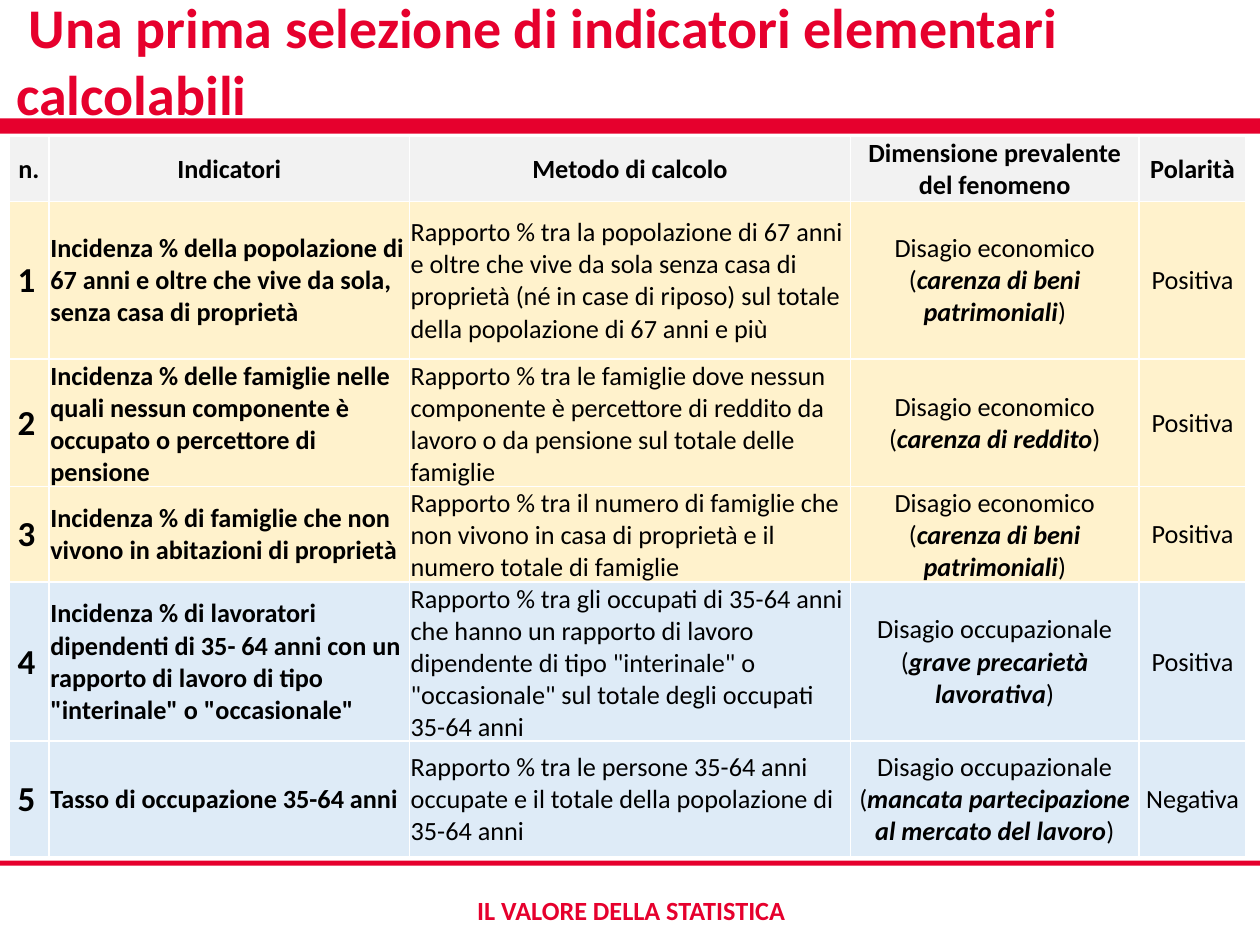
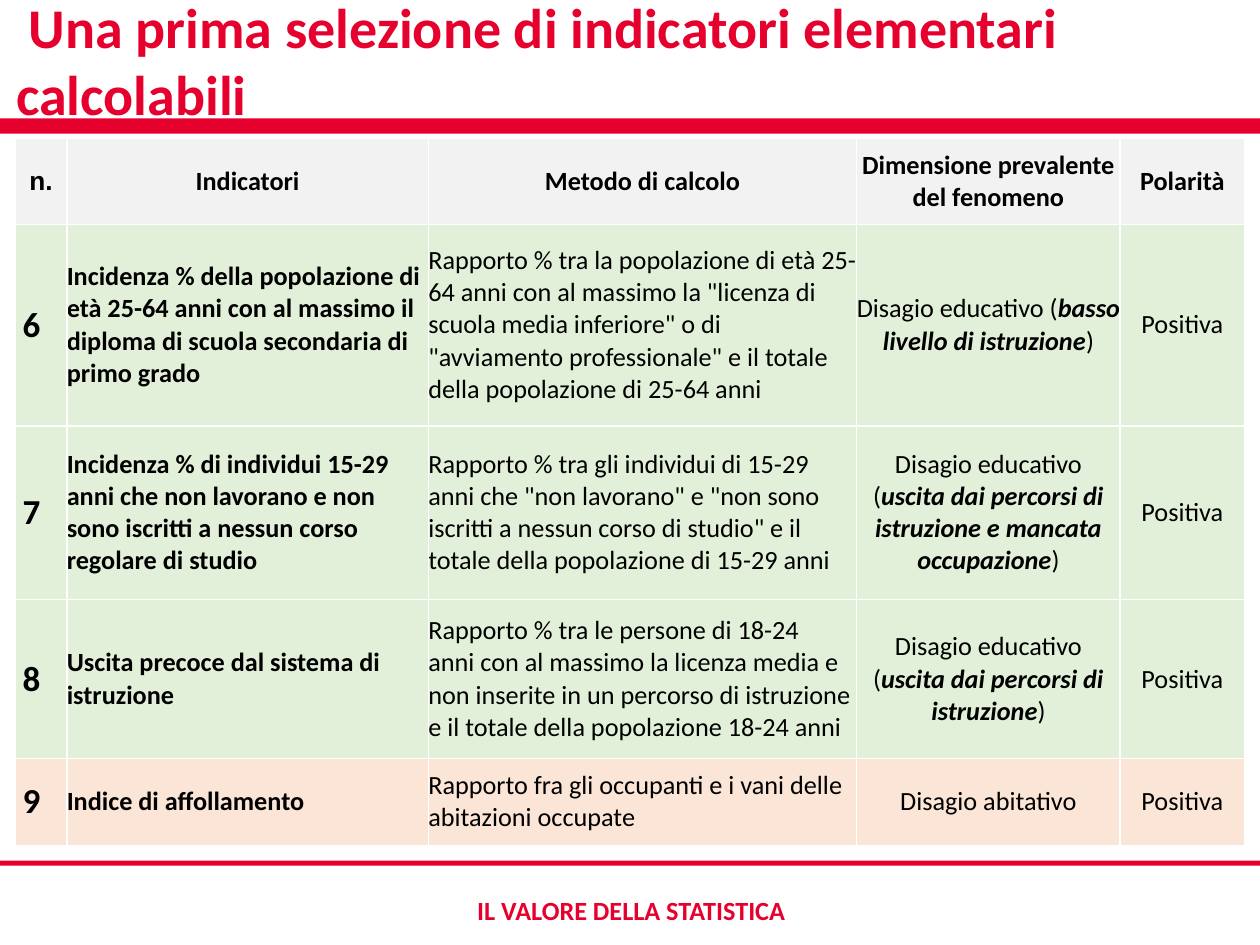
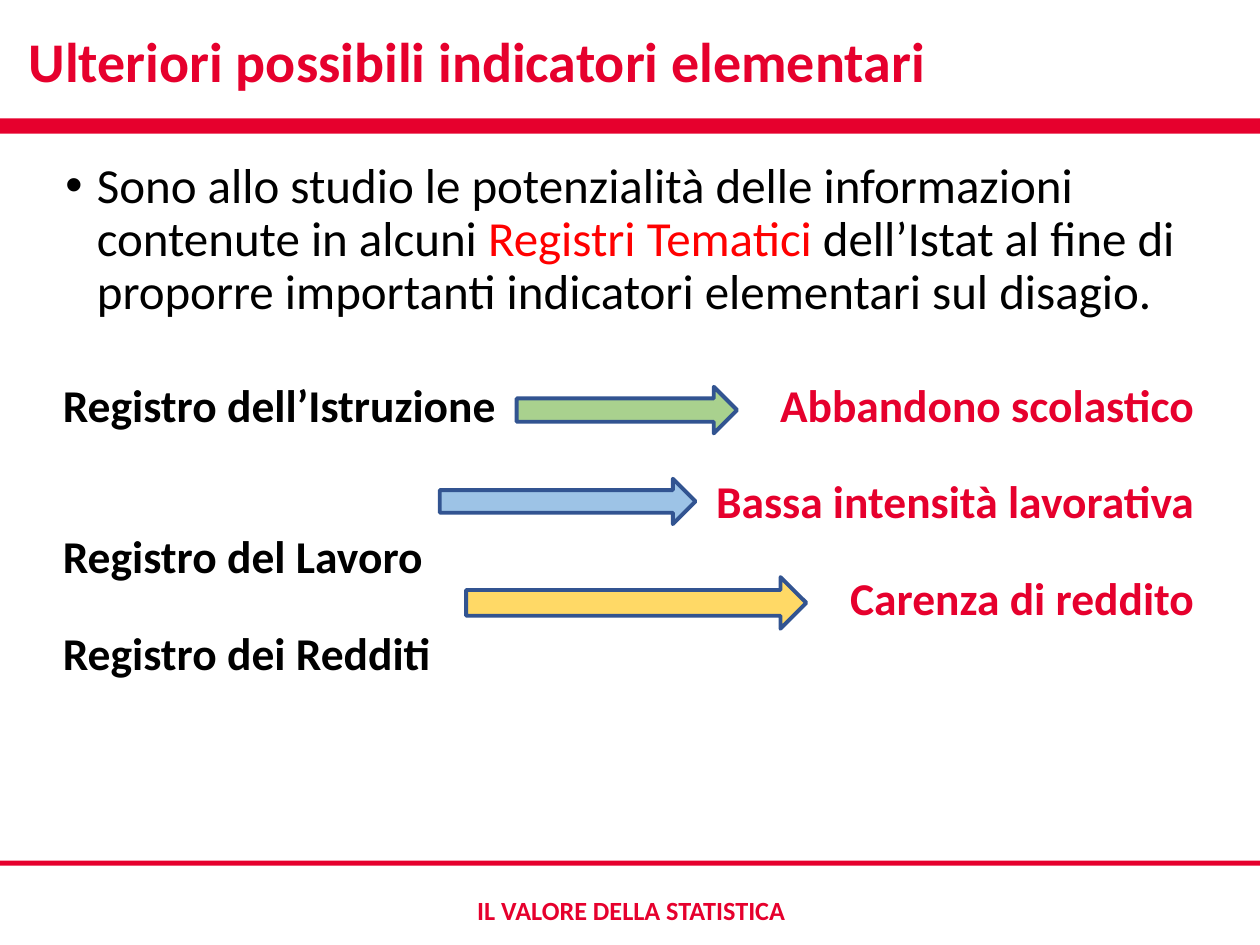
from dataclasses import dataclass

from lxml import etree
from pptx import Presentation
from pptx.dml.color import RGBColor
from pptx.enum import shapes, text
from pptx.oxml import ns
from pptx.util import Inches, Pt


@dataclass(frozen=True)
class Theme:
    font: str = "Calibri"
    red: str = "E6002D"
    accent: str = "FF0000"
    black: str = "000000"
    white: str = "FFFFFF"
    header: str = "F2F2F2"
    economic: str = "FFF2CC"
    work: str = "DEEBF7"
    school: str = "E2F0D9"
    housing: str = "FBE5D6"
    arrow_line: str = "325491"
    arrow_green: str = "A9D18E"
    arrow_blue: str = "9DC3E6"
    arrow_yellow: str = "FFD966"
    title_size: int = 32
    body_size: int = 28
    register_size: int = 26
    number_size: int = 20
    small_size: int = 15


@dataclass(frozen=True)
class Box:
    left: float
    top: float
    width: float
    height: float

    def inside(self, left, top, width, height):
        return Box(self.left + left, self.top + top, width, height)

    def lengths(self):
        return [Inches(side) for side in (self.left, self.top, self.width, self.height)]


THEME = Theme()
PAGE = Box(0, 0, 10, 7.5)
LEFT, CENTER, RIGHT = text.PP_ALIGN.LEFT, text.PP_ALIGN.CENTER, text.PP_ALIGN.RIGHT
MIDDLE = text.MSO_ANCHOR.MIDDLE
SELECTION_TITLE = "Una prima selezione di indicatori elementari calcolabili"
HEADINGS = ["n.", "Indicatori", "Metodo di calcolo",
            "Dimensione prevalente del fenomeno", "Polarità"]

FIRST_INDICATORS = [
    (THEME.economic, "Incidenza % della popolazione di 67 anni e oltre che vive da sola, "
     "senza casa di proprietà",
     "Rapporto % tra la popolazione di 67 anni e oltre che vive da sola senza casa di "
     "proprietà (né in case di riposo) sul totale della popolazione di 67 anni e più",
     "Disagio economico", "carenza di beni patrimoniali", "Positiva"),
    (THEME.economic, "Incidenza % delle famiglie nelle quali nessun componente è occupato "
     "o percettore di pensione",
     "Rapporto % tra le famiglie dove nessun componente è percettore di reddito da lavoro "
     "o da pensione sul totale delle famiglie",
     "Disagio economico", "carenza di reddito", "Positiva"),
    (THEME.economic, "Incidenza % di famiglie che non vivono in abitazioni di proprietà",
     "Rapporto % tra il numero di famiglie che non vivono in casa di proprietà e il numero "
     "totale di famiglie",
     "Disagio economico", "carenza di beni patrimoniali", "Positiva"),
    (THEME.work, "Incidenza % di lavoratori dipendenti di 35- 64 anni con un rapporto di "
     'lavoro di tipo "interinale" o "occasionale"',
     "Rapporto % tra gli occupati di 35-64 anni che hanno un rapporto di lavoro dipendente "
     'di tipo "interinale" o "occasionale" sul totale degli occupati 35-64 anni',
     "Disagio occupazionale", "grave precarietà lavorativa", "Positiva"),
    (THEME.work, "Tasso di occupazione 35-64 anni",
     "Rapporto % tra le persone 35-64 anni occupate e il totale della popolazione di "
     "35-64 anni",
     "Disagio occupazionale", "mancata partecipazione al mercato del lavoro", "Negativa"),
]

SECOND_INDICATORS = [
    (THEME.school, "Incidenza % della popolazione di età 25-64 anni con al massimo il "
     "diploma di scuola secondaria di primo grado",
     'Rapporto % tra la popolazione di età 25-64 anni con al massimo la "licenza di scuola '
     'media inferiore" o di "avviamento professionale" e il totale della popolazione di '
     "25-64 anni",
     "Disagio educativo", "basso livello di istruzione", "Positiva"),
    (THEME.school, "Incidenza % di individui 15-29 anni che non lavorano e non sono "
     "iscritti a nessun corso regolare di studio",
     'Rapporto % tra gli individui di 15-29 anni che "non lavorano" e "non sono iscritti a '
     'nessun corso di studio" e il totale della popolazione di 15-29 anni',
     "Disagio educativo", "uscita dai percorsi di istruzione e mancata occupazione",
     "Positiva"),
    (THEME.school, "Uscita precoce dal sistema di istruzione",
     "Rapporto % tra le persone di 18-24\nanni con al massimo la licenza media e non "
     "inserite in un percorso di istruzione e il totale della popolazione 18-24 anni",
     "Disagio educativo", "uscita dai percorsi di istruzione", "Positiva"),
    (THEME.housing, "Indice di affollamento",
     "Rapporto fra gli occupanti e i vani delle abitazioni occupate",
     "Disagio abitativo", "", "Positiva"),
]


def write(para, words, size=THEME.small_size, color=THEME.black, bold=False,
          italic=False, font=THEME.font, align=None, indent=0):
    if align is not None:
        para.alignment = align
    if indent:
        para._p.get_or_add_pPr().set("indent", str(Inches(indent)))
    for position, line in enumerate(words.split("\n")):
        if position:
            para.add_line_break()
        span = para.add_run()
        span.text = line
        span.font.size = Pt(size)
        span.font.name = font
        span.font.bold = bold
        span.font.italic = italic
        span.font.color.rgb = RGBColor.from_string(color)


def add_frame(page, box, anchor=None):
    frame = page.shapes.add_textbox(*box.lengths()).text_frame
    frame.word_wrap = True
    if anchor is not None:
        frame.vertical_anchor = anchor
    return frame


def add_filled(page, box, kind, fill, line=None):
    shape = page.shapes.add_shape(kind, *box.lengths())
    shape.shadow.inherit = False
    shape.fill.solid()
    shape.fill.fore_color.rgb = RGBColor.from_string(fill)
    if line:
        shape.line.color.rgb = RGBColor.from_string(line)
        shape.line.width = Pt(2.25)
    else:
        shape.line.fill.background()


def add_bands_and_footer(page, box):
    for top, height in ((6.83, 0.04), (0.94, 0.12)):
        add_filled(page, box.inside(0, top, box.width, height),
                   shapes.MSO_SHAPE.RECTANGLE, THEME.red)
    frame = add_frame(page, box.inside(2.12, 7.05, 5.78, 0.35))
    write(frame.paragraphs[0], "IL VALORE DELLA STATISTICA", color=THEME.red,
          bold=True, align=CENTER)


def add_title(page, box, title):
    frame = add_frame(page, box, MIDDLE)
    write(frame.paragraphs[0], title, size=THEME.title_size, color=THEME.red,
          bold=True, indent=0.1)


def add_page(deck, title):
    page = deck.slides.add_slide(deck.slide_layouts[6])
    add_bands_and_footer(page, PAGE)
    add_title(page, PAGE.inside(0.03, 0.04, 9.97, 0.87), title)
    return page


def style_cell(cell, fill, inset):
    properties = cell._tc.get_or_add_tcPr()
    for side in ("a:lnL", "a:lnR", "a:lnT", "a:lnB"):
        border = etree.SubElement(properties, ns.qn(side), w=str(Pt(1)))
        solid = etree.SubElement(border, ns.qn("a:solidFill"))
        etree.SubElement(solid, ns.qn("a:srgbClr"), val=THEME.white)
    cell.fill.solid()
    cell.fill.fore_color.rgb = RGBColor.from_string(fill)
    cell.vertical_anchor = MIDDLE
    cell.margin_left = cell.margin_right = cell.margin_top = Inches(inset)
    cell.margin_bottom = 0


def add_indicator_table(page, box, widths, heights, indicators, first_number, inset,
                        number_font):
    table = page.shapes.add_table(len(heights), len(widths), *box.lengths()).table
    table.first_row = table.horz_banding = False
    for column, width in zip(table.columns, widths):
        column.width = Inches(width)
    for row, height in zip(table.rows, heights):
        row.height = Inches(height)
    fills = [THEME.header] + [indicator[0] for indicator in indicators]
    for row, fill in zip(table.rows, fills):
        for cell in row.cells:
            style_cell(cell, fill, inset)

    def para_at(row, column):
        return table.cell(row, column).text_frame.paragraphs[0]

    for column, heading in enumerate(HEADINGS):
        write(para_at(0, column), heading, bold=True, align=CENTER,
              font=THEME.font if column else number_font)
    for row, (_, name, method, hardship, detail, polarity) in enumerate(indicators, 1):
        write(para_at(row, 0), str(first_number + row - 1), size=THEME.number_size,
              bold=True, indent=0.06, font=number_font if row == 0 else THEME.font)
        write(para_at(row, 1), name, bold=True)
        write(para_at(row, 2), method)
        dimension = para_at(row, 3)
        write(dimension, f"{hardship} (" if detail else hardship, align=CENTER)
        if detail:
            write(dimension, detail, bold=True, italic=True)
            write(dimension, ")")
        write(para_at(row, 4), polarity, align=CENTER)


def add_study_note(page, box):
    para = add_frame(page, box).paragraphs[0]
    properties = para._p.get_or_add_pPr()
    properties.set("marL", str(Inches(0.25)))
    properties.set("indent", str(Inches(-0.25)))
    etree.SubElement(properties, ns.qn("a:buFont"), typeface="Arial")
    etree.SubElement(properties, ns.qn("a:buChar"), char="•")
    para.line_spacing = 0.9
    for words, color in (
        ("Sono allo studio le potenzialità delle informazioni contenute in alcuni ",
         THEME.black),
        ("Registri Tematici ", THEME.accent),
        ("dell’Istat al fine di proporre importanti indicatori elementari sul disagio.",
         THEME.black),
    ):
        write(para, words, size=THEME.body_size, color=color)


def add_register_list(page, box, entries, color, align, second_gap=12):
    frame = add_frame(page, box)
    for position, entry in enumerate(entries):
        para = frame.add_paragraph() if position else frame.paragraphs[0]
        if position:
            para.space_before = Pt(second_gap if position == 1 else 12)
        para.space_after = Pt(12)
        write(para, entry, size=THEME.register_size, color=color, bold=True, align=align)


def add_registers(page, box):
    add_register_list(page, box.inside(5.02, 0, 4.16, 2.09),
                      ["Abbandono scolastico", "Bassa intensità lavorativa",
                       "Carenza di reddito"], THEME.red, RIGHT)
    add_register_list(page, box.inside(0, 0, 3.7, 2.09),
                      ["Registro dell’Istruzione", "Registro del Lavoro",
                       "Registro dei Redditi"], THEME.black, LEFT, second_gap=43.5)
    for place, fill in (
        ((3.7, 0.13, 1.75, 0.37), THEME.arrow_green),
        ((3.09, 0.86, 2.03, 0.36), THEME.arrow_blue),
        ((3.3, 1.64, 2.7, 0.41), THEME.arrow_yellow),
    ):
        add_filled(page, box.inside(*place), shapes.MSO_SHAPE.RIGHT_ARROW, fill,
                   THEME.arrow_line)


def main():
    deck = Presentation()
    deck.slide_width, deck.slide_height = Inches(PAGE.width), Inches(PAGE.height)

    page = add_page(deck, SELECTION_TITLE)
    add_indicator_table(page, PAGE.inside(0.07, 1.08, 9.81, 5.71),
                        [0.32, 2.86, 3.5, 2.29, 0.85],
                        [0.52, 1.25, 1, 0.75, 1.25, 0.92],
                        FIRST_INDICATORS, 1, 0.01, THEME.font)

    page = add_page(deck, SELECTION_TITLE)
    add_indicator_table(page, PAGE.inside(0.12, 1.1, 9.76, 5.61),
                        [0.41, 2.87, 3.4, 2.09, 0.99],
                        [0.68, 1.6, 1.38, 1.26, 0.69],
                        SECOND_INDICATORS, 6, 0, "Arial")

    page = add_page(deck, "Ulteriori possibili indicatori elementari")
    add_study_note(page, PAGE.inside(0.42, 1.23, 9.19, 1.53))
    add_registers(page, PAGE.inside(0.4, 2.94, 9.18, 2.09))

    deck.save("out.pptx")


if __name__ == "__main__":
    main()
